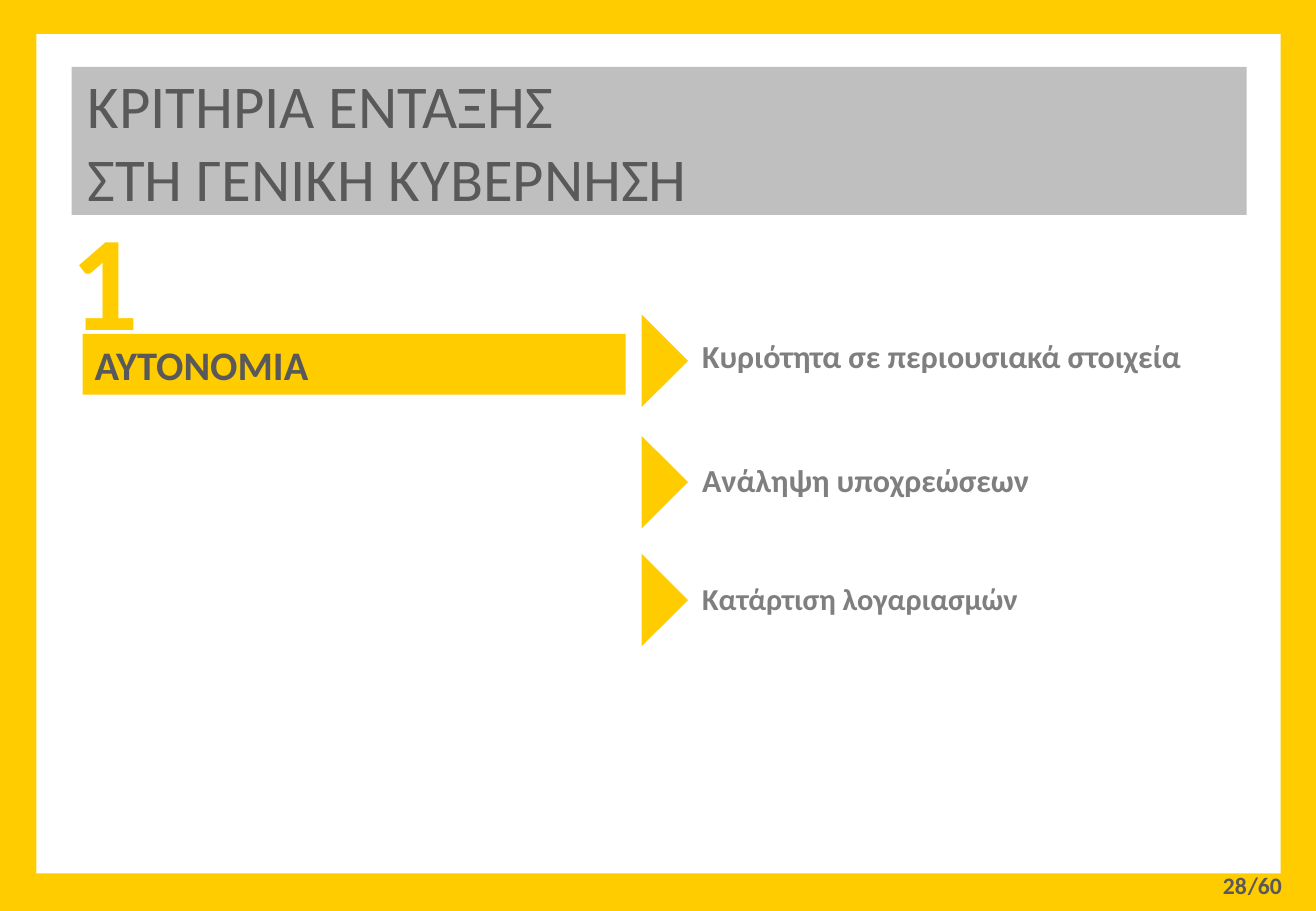
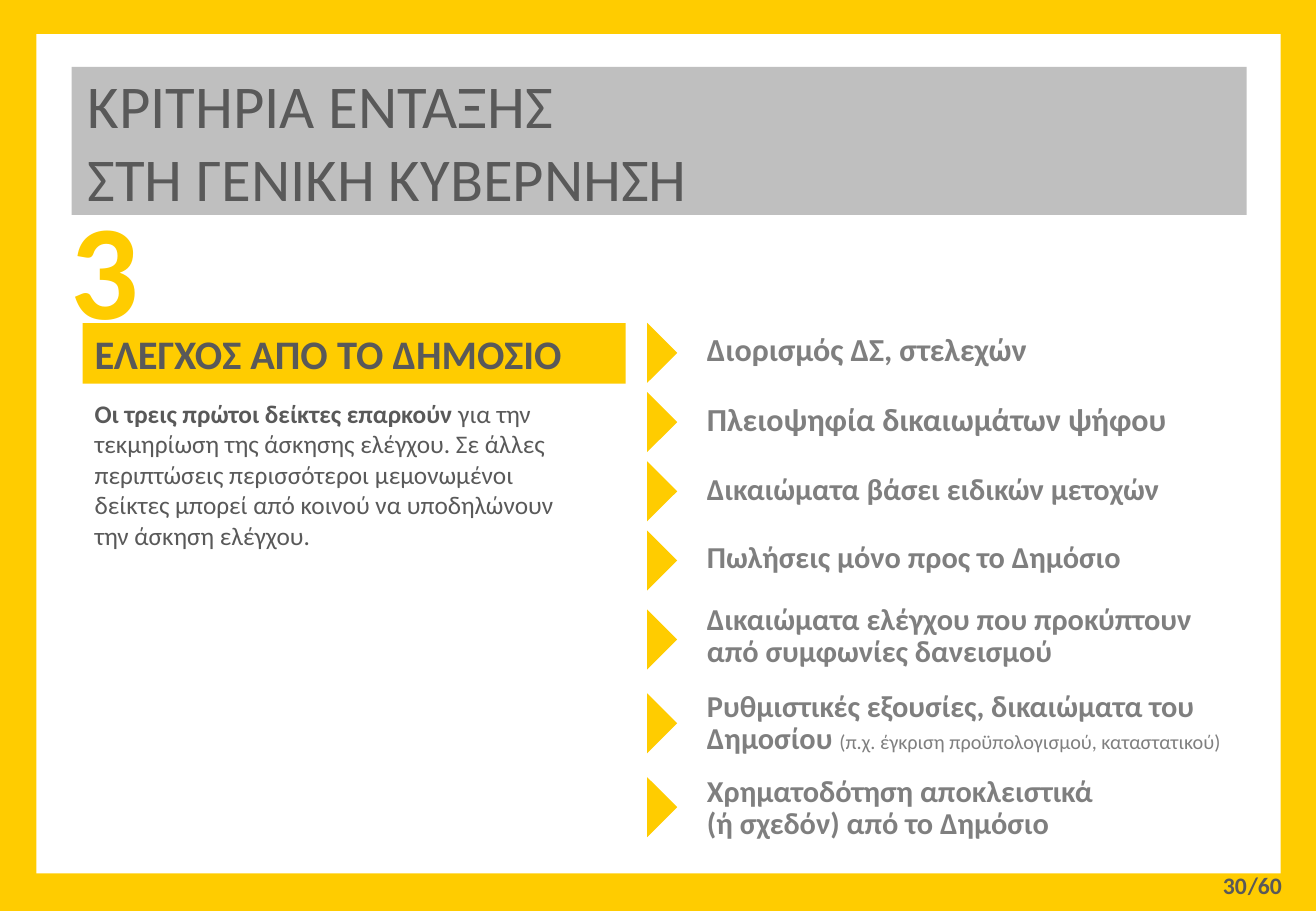
from dataclasses import dataclass, replace

from pptx import Presentation
from pptx import util as u
from pptx.dml.color import RGBColor
from pptx.enum import shapes, text

YELLOW = RGBColor(0xFF, 0xCC, 0x00)
WHITE = RGBColor(0xFF, 0xFF, 0xFF)
SILVER = RGBColor(0xBF, 0xBF, 0xBF)
DARK = RGBColor(0x59, 0x59, 0x59)
GREY = RGBColor(0x7F, 0x7F, 0x7F)

FONT = "Calibri"
TITLE = "ΚΡΙΤΗΡΙΑ ΕΝΤΑΞΗΣ\vΣΤΗ ΓΕΝΙΚΗ ΚΥΒΕΡΝΗΣΗ"
PX = u.Inches(1) // 100
WIDTH, HEIGHT = 1083, 750
LABEL_WIDTH = 447


@dataclass(frozen=True)
class Area:
    left: int
    top: int
    width: int
    height: int

    def emu(self) -> tuple:
        return tuple(
            u.Emu(side * PX) for side in (self.left, self.top, self.width, self.height)
        )


@dataclass(frozen=True)
class Style:
    size: int
    color: RGBColor
    bold: bool = True


@dataclass(frozen=True)
class Phrase:
    lead: str
    tail: str = ""
    tail_size: int = 0


@dataclass(frozen=True)
class Indicator:
    phrase: Phrase
    size: int
    top: int
    marker_top: int


@dataclass(frozen=True)
class Criterion:
    page: str
    number: str
    name: str
    bar_top: int
    label_left: int
    marker_left: int
    marker_size: int
    indicators: tuple
    note: Phrase | None = None


CRITERIA = (
    Criterion(
        "28", "1", "ΑΥΤΟΝΟΜΙΑ", 275, 568, 501, 54,
        (
            Indicator(Phrase("Κυριότητα σε περιουσιακά στοιχεία"), 19, 275, 270),
            Indicator(Phrase("Ανάληψη υποχρεώσεων"), 19, 377, 370),
            Indicator(Phrase("Κατάρτιση λογαριασμών"), 18, 474, 467),
        ),
    ),
    Criterion(
        "30", "3", "ΕΛΕΓΧΟΣ ΑΠΟ ΤΟ ΔΗΜΟΣΙΟ", 266, 572, 515, 35,
        (
            Indicator(Phrase("Διορισμός ΔΣ, στελεχών"), 19, 269, 273),
            Indicator(Phrase("Πλειοψηφία δικαιωμάτων ψήφου"), 19, 327, 330),
            Indicator(Phrase("Δικαιώματα βάσει ειδικών μετοχών"), 18, 383, 387),
            Indicator(Phrase("Πωλήσεις μόνο προς το Δημόσιο"), 18, 439, 444),
            Indicator(
                Phrase("Δικαιώματα ελέγχου που προκύπτουν\vαπό συμφωνίες δανεισμού"),
                18, 493, 509,
            ),
            Indicator(
                Phrase(
                    "Ρυθμιστικές εξουσίες, δικαιώματα του\vΔημοσίου ",
                    "(π.χ. έγκριση προϋπολογισμού, καταστατικού)",
                    12,
                ),
                18, 565, 578,
            ),
            Indicator(
                Phrase("Χρηματοδότηση αποκλειστικά\v(ή σχεδόν) από το Δημόσιο"),
                18, 635, 647,
            ),
        ),
        Phrase(
            "Οι τρεις πρώτοι δείκτες επαρκούν ",
            "για την τεκμηρίωση της άσκησης ελέγχου. Σε άλλες περιπτώσεις "
            "περισσότεροι μεμονωμένοι δείκτες μπορεί από κοινού να υποδηλώνουν "
            "την άσκηση ελέγχου.",
            15,
        ),
    ),
)


def format_span(span, style: Style) -> None:
    span.font.name = FONT
    span.font.size = u.Pt(style.size)
    span.font.bold = style.bold
    span.font.color.rgb = style.color


def write(frame, phrase: Phrase, style: Style, align=text.PP_ALIGN.LEFT):
    para = frame.paragraphs[0]
    para.text = phrase.lead
    para.alignment = align
    for span in para.runs:
        format_span(span, style)
    if phrase.tail:
        span = para.add_run()
        span.text = phrase.tail
        format_span(span, replace(style, size=phrase.tail_size, bold=False))
    return para


def add_label(page, area: Area, phrase: Phrase, style: Style,
              wrap: bool = False, align=text.PP_ALIGN.LEFT):
    box = page.shapes.add_textbox(*area.emu())
    box.text_frame.word_wrap = wrap
    write(box.text_frame, phrase, style, align)
    return box


def add_block(page, area: Area, color: RGBColor,
              kind=shapes.MSO_SHAPE.RECTANGLE, rotation: int = 0):
    block = page.shapes.add_shape(kind, *area.emu())
    block.shadow.inherit = False
    block.fill.solid()
    block.fill.fore_color.rgb = color
    block.line.fill.background()
    block.rotation = rotation
    return block


def move_frame_to_layout(page) -> None:
    layout = page.slide_layout
    parts = (
        add_block(page, Area(0, 0, WIDTH, HEIGHT), YELLOW),
        add_block(page, Area(30, 28, 1024, 691), WHITE),
        add_block(page, Area(59, 55, 967, 122), SILVER),
        add_label(page, Area(1017, 712, 48, 34), Phrase("/60"), Style(14, DARK)),
    )
    for shape_id, part in enumerate(parts, start=20):
        part.element.nvSpPr.cNvPr.id = shape_id
        layout.shapes.element.append(part.element)


def set_title(page) -> None:
    title = page.shapes.title
    title.left, title.top, title.width, title.height = Area(62, 51, 960, 120).emu()
    frame = title.text_frame
    frame.auto_size = text.MSO_AUTO_SIZE.NONE
    frame.vertical_anchor = text.MSO_ANCHOR.TOP
    write(frame, Phrase(TITLE), Style(36, DARK, bold=False))


def add_heading(page, criterion: Criterion) -> None:
    top = criterion.bar_top
    bar = add_block(page, Area(68, top, 447, 50), YELLOW)
    bar.text_frame.vertical_anchor = text.MSO_ANCHOR.MIDDLE
    write(bar.text_frame, Phrase(criterion.name), Style(24, DARK))
    add_label(page, Area(48, top - 119, 77, 145), Phrase(criterion.number),
              Style(80, YELLOW))
    if criterion.note:
        add_label(page, Area(68, top + 57, 411, 136), criterion.note,
                  Style(15, DARK), wrap=True)


def add_indicator(page, criterion: Criterion, indicator: Indicator) -> None:
    two_lines = "\v" in indicator.phrase.lead
    area = Area(criterion.label_left, indicator.top, LABEL_WIDTH, 64 if two_lines else 40)
    label = add_label(page, area, indicator.phrase, Style(indicator.size, GREY))
    label.text_frame.paragraphs[0].line_spacing = u.Pt(18.8 if two_lines else 20.8)
    side = criterion.marker_size
    add_block(page, Area(criterion.marker_left, indicator.marker_top, side, side),
              YELLOW, shapes.MSO_SHAPE.RIGHT_TRIANGLE, 225)


def main() -> None:
    deck = Presentation()
    deck.slide_width, deck.slide_height = u.Emu(WIDTH * PX), u.Emu(HEIGHT * PX)
    pages = [deck.slides.add_slide(deck.slide_layouts[5]) for _ in CRITERIA]
    move_frame_to_layout(pages[0])
    for page, criterion in zip(pages, CRITERIA):
        set_title(page)
        add_heading(page, criterion)
        add_label(page, Area(992, 712, 44, 40), Phrase(criterion.page),
                  Style(14, DARK), wrap=True, align=text.PP_ALIGN.RIGHT)
        for indicator in criterion.indicators:
            add_indicator(page, criterion, indicator)
    deck.save("out.pptx")


if __name__ == "__main__":
    main()
